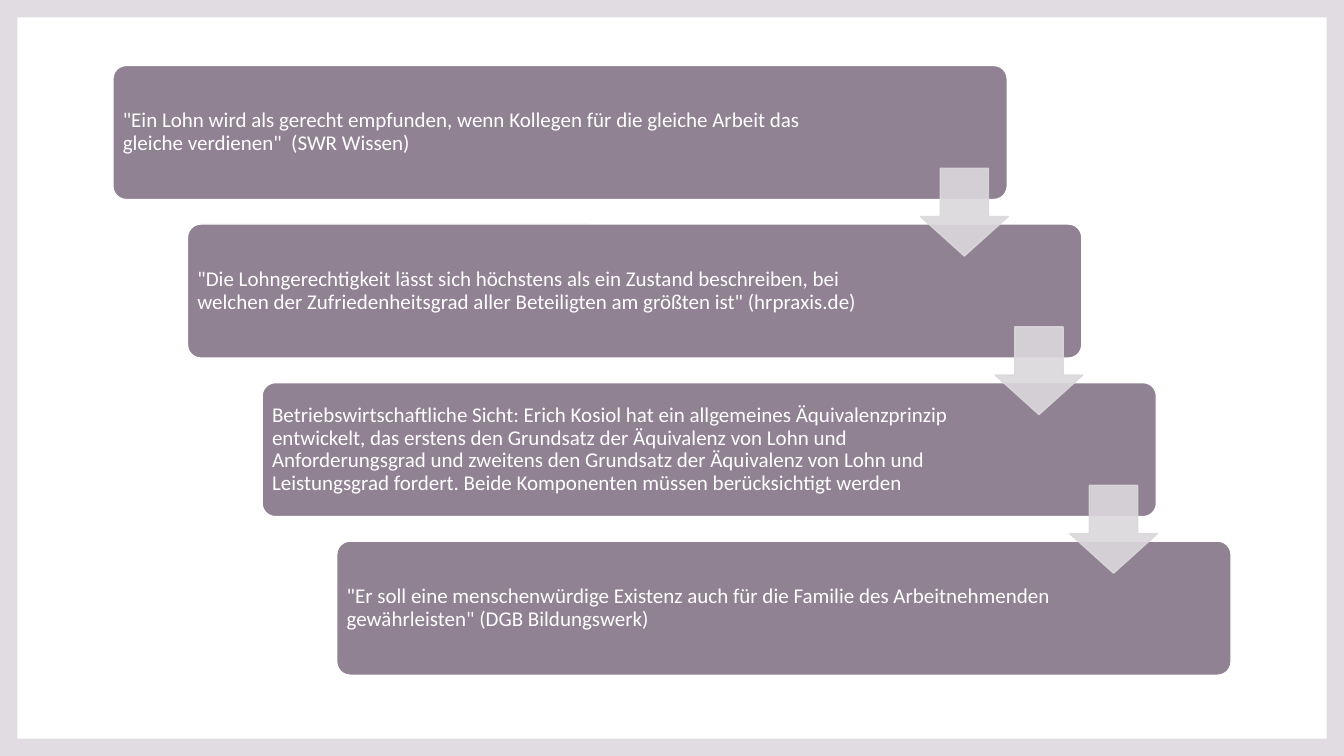
from lxml import etree
from pptx import Presentation
from pptx.dml.color import RGBColor
from pptx.enum.shapes import MSO_SHAPE
from pptx.enum.text import MSO_ANCHOR, PP_ALIGN
from pptx.oxml.ns import qn
from pptx.util import Inches, Pt

FRAME, STEP, ARROW = MSO_SHAPE.FRAME, MSO_SHAPE.ROUNDED_RECTANGLE, MSO_SHAPE.DOWN_ARROW
MIDDLE, LEFT = MSO_ANCHOR.MIDDLE, PP_ALIGN.LEFT

# Content
STATEMENTS = [
    '"Ein Lohn wird als gerecht empfunden, wenn Kollegen für die gleiche Arbeit das '
    'gleiche verdienen"\u00a0 (SWR Wissen)',
    '"Die Lohngerechtigkeit lässt sich höchstens als ein Zustand beschreiben, bei welchen '
    'der Zufriedenheitsgrad aller Beteiligten am größten ist" (hrpraxis.de)',
    'Betriebswirtschaftliche Sicht: Erich Kosiol hat ein allgemeines Äquivalenzprinzip '
    'entwickelt, das erstens den Grundsatz der Äquivalenz von Lohn und Anforderungsgrad '
    'und zweitens den Grundsatz der Äquivalenz von Lohn und Leistungsgrad fordert. '
    'Beide Komponenten müssen berücksichtigt werden',
    '"Er soll eine menschenwürdige Existenz auch für die Familie des Arbeitnehmenden '
    'gewährleisten" (DGB Bildungswerk)',
]

# Format and layout, in inches
COLORS = {"frame": "E0DCE1", "step": "908193", "arrow": "DBD8DC", "white": "FFFFFF"}
FONT = {"name": "Calibri", "size": Pt(15)}
INSETS = {"margin_left": 0.06, "margin_top": 0.06, "margin_right": 1.65, "margin_bottom": 0.06}
SLIDE_W, SLIDE_H = 13.33, 7.5
STEP_X, STEP_Y, STEP_W, STEP_H = 1.12, 0.65, 8.87, 1.33
SHIFT_X, SHIFT_Y = 0.74, 1.573
ARROW_SIZE = 0.87
ARROW_DX, ARROW_DY = 8.01, 1.02  # from the corner of the step above


def add_block(slide, kind, box, fill, line, adjustments):
    sp = slide.shapes.add_shape(kind, *(Inches(v) for v in box))
    sp.shadow.inherit = False
    sp.fill.solid()
    sp.fill.fore_color.rgb = RGBColor.from_string(COLORS[fill])
    sp.line.width = Pt(1)
    sp.line.color.rgb = RGBColor.from_string(COLORS[line])
    for i, value in enumerate(adjustments):
        sp.adjustments[i] = value
    return sp


def set_opacity(sp, percent):
    for color in sp._element.spPr.iter(qn("a:srgbClr")):
        etree.SubElement(color, qn("a:alpha")).set("val", str(percent * 1000))


def write_statement(sp, text):
    tf = sp.text_frame
    tf.word_wrap = True
    tf.vertical_anchor = MIDDLE
    for name, value in INSETS.items():
        setattr(tf, name, Inches(value))
    p = tf.paragraphs[0]
    p.alignment = LEFT
    p.line_spacing = 0.9
    r = p.add_run()
    r.text = text
    for name, value in FONT.items():
        setattr(r.font, name, value)
    r.font.color.rgb = RGBColor.from_string(COLORS["white"])


def main():
    prs = Presentation()
    prs.slide_width, prs.slide_height = Inches(SLIDE_W), Inches(SLIDE_H)
    slide = prs.slides.add_slide(prs.slide_layouts[6])

    # Border around the slide
    border = add_block(slide, FRAME, (0, 0, SLIDE_W, SLIDE_H), "frame", "frame", [0.023])
    border.line.fill.background()

    # Staircase of statements
    corners = [(STEP_X + i * SHIFT_X, STEP_Y + i * SHIFT_Y) for i in range(len(STATEMENTS))]
    for (x, y), text in zip(corners, STATEMENTS):
        sp = add_block(slide, STEP, (x, y, STEP_W, STEP_H), "step", "white", [0.1])
        write_statement(sp, text)

    # Arrows from each step to the next
    for x, y in corners[:-1]:
        box = (x + ARROW_DX, y + ARROW_DY, ARROW_SIZE, ARROW_SIZE)
        # The preset's first value is the shaft width, the second the head length
        sp = add_block(slide, ARROW, box, "arrow", "arrow", [0.55, 0.45])
        set_opacity(sp, 90)

    prs.save("out.pptx")


if __name__ == "__main__":
    main()
